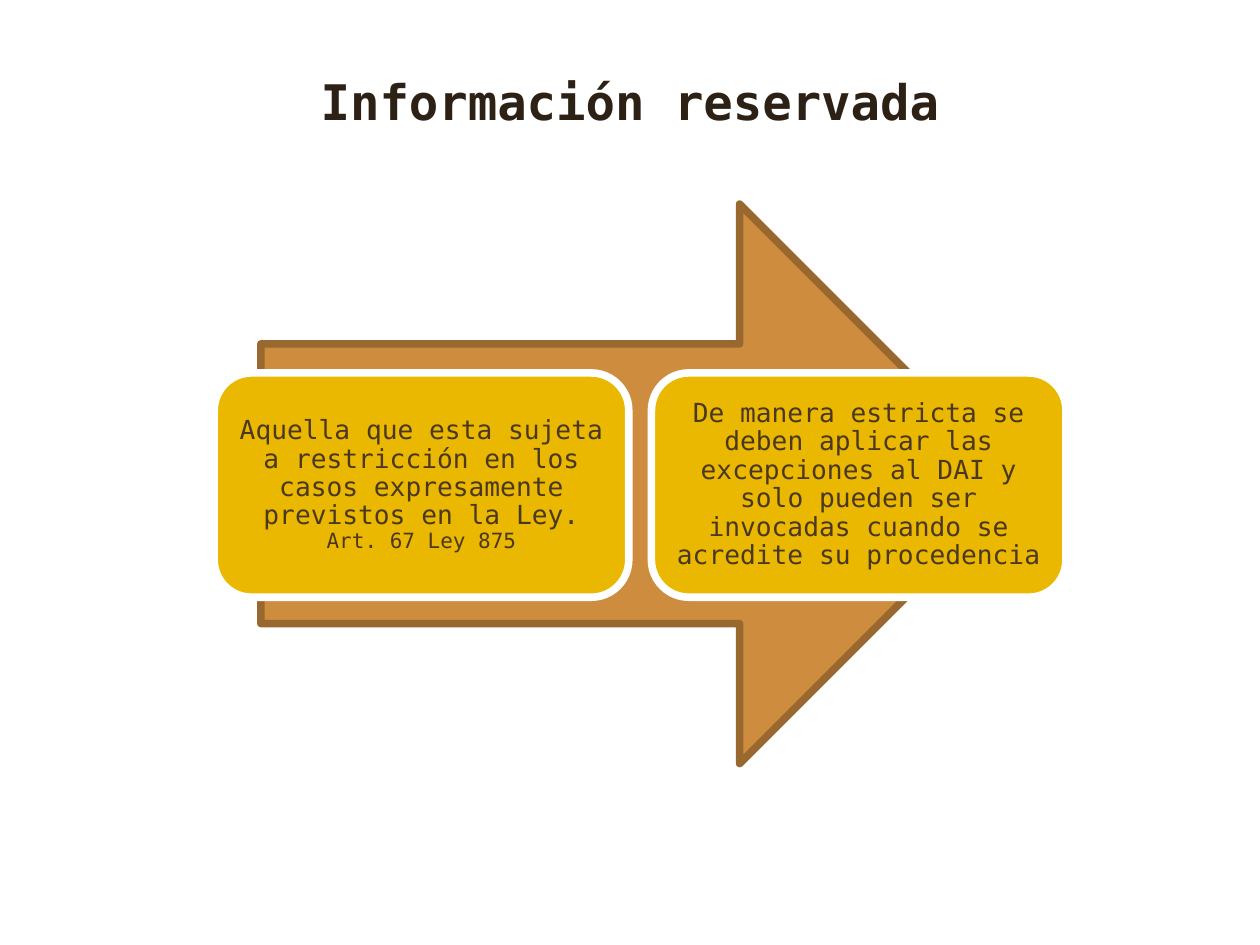
"""Build the slide about reserved information."""
from pptx import Presentation
from pptx.dml.color import RGBColor
from pptx.enum import shapes, text
from pptx.util import Inches, Pt

FONT = "DejaVu Sans Mono"
WHITE = RGBColor(0xFF, 0xFF, 0xFF)
TITLE_BROWN = RGBColor(0x2C, 0x21, 0x14)
TEXT_BROWN = RGBColor(0x4B, 0x38, 0x22)
ARROW_FILL = RGBColor(0xCE, 0x8D, 0x3E)
ARROW_LINE = RGBColor(0x98, 0x68, 0x2E)
YELLOW = RGBColor(0xEA, 0xB8, 0x00)

CARD_LEFT, CARD_STEP = 1.7, 3.47
CARDS = [
    [("Aquella que esta sujeta a restricción en los casos expresamente "
      "previstos en la Ley. ", 15), ("Art. 67 Ley 875", 12)],
    [("De manera estricta se deben aplicar las excepciones al DAI y solo "
      "pueden ser invocadas cuando se acredite su procedencia", 15)],
]


def add_span(para, wording, size, color, bold=False):
    span = para.add_run()
    span.text = wording
    span.font.name = FONT
    span.font.size = Pt(size)
    span.font.bold = bold
    span.font.color.rgb = color


def add_title(page, wording):
    box = page.shapes.add_textbox(Inches(0.75), Inches(0.52), Inches(8.5), Inches(1.42))
    box.text_frame.word_wrap = True
    para = box.text_frame.paragraphs[0]
    para.alignment = text.PP_ALIGN.CENTER
    add_span(para, wording, 28, TITLE_BROWN, bold=True)


def add_block(page, kind, left, top, width, height, fill, line):
    block = page.shapes.add_shape(
        kind, Inches(left), Inches(top), Inches(width), Inches(height))
    block.shadow.inherit = False
    block.fill.solid()
    block.fill.fore_color.rgb = fill
    block.line.color.rgb = line
    block.line.width = Pt(4.33)
    return block


def add_card(page, left, spans):
    card = add_block(page, shapes.MSO_SHAPE.ROUNDED_RECTANGLE,
                     left, 2.96, 3.29, 1.78, YELLOW, WHITE)
    frame = card.text_frame
    frame.word_wrap = True
    frame.vertical_anchor = text.MSO_ANCHOR.MIDDLE
    frame.margin_left = frame.margin_right = Inches(0.06)
    frame.margin_top = frame.margin_bottom = Inches(0.06)
    para = frame.paragraphs[0]
    para.alignment = text.PP_ALIGN.CENTER
    para.line_spacing = 0.9
    for wording, size in spans:
        add_span(para, wording, size, TEXT_BROWN)


def main():
    deck = Presentation()
    deck.slide_width, deck.slide_height = Inches(10), Inches(7.5)
    page = deck.slides.add_slide(deck.slide_layouts[6])
    add_title(page, "Información reservada")
    add_block(page, shapes.MSO_SHAPE.RIGHT_ARROW,
              2.07, 1.62, 6.02, 4.44, ARROW_FILL, ARROW_LINE)
    for index, spans in enumerate(CARDS):
        add_card(page, CARD_LEFT + index * CARD_STEP, spans)
    deck.save("out.pptx")


if __name__ == "__main__":
    main()
